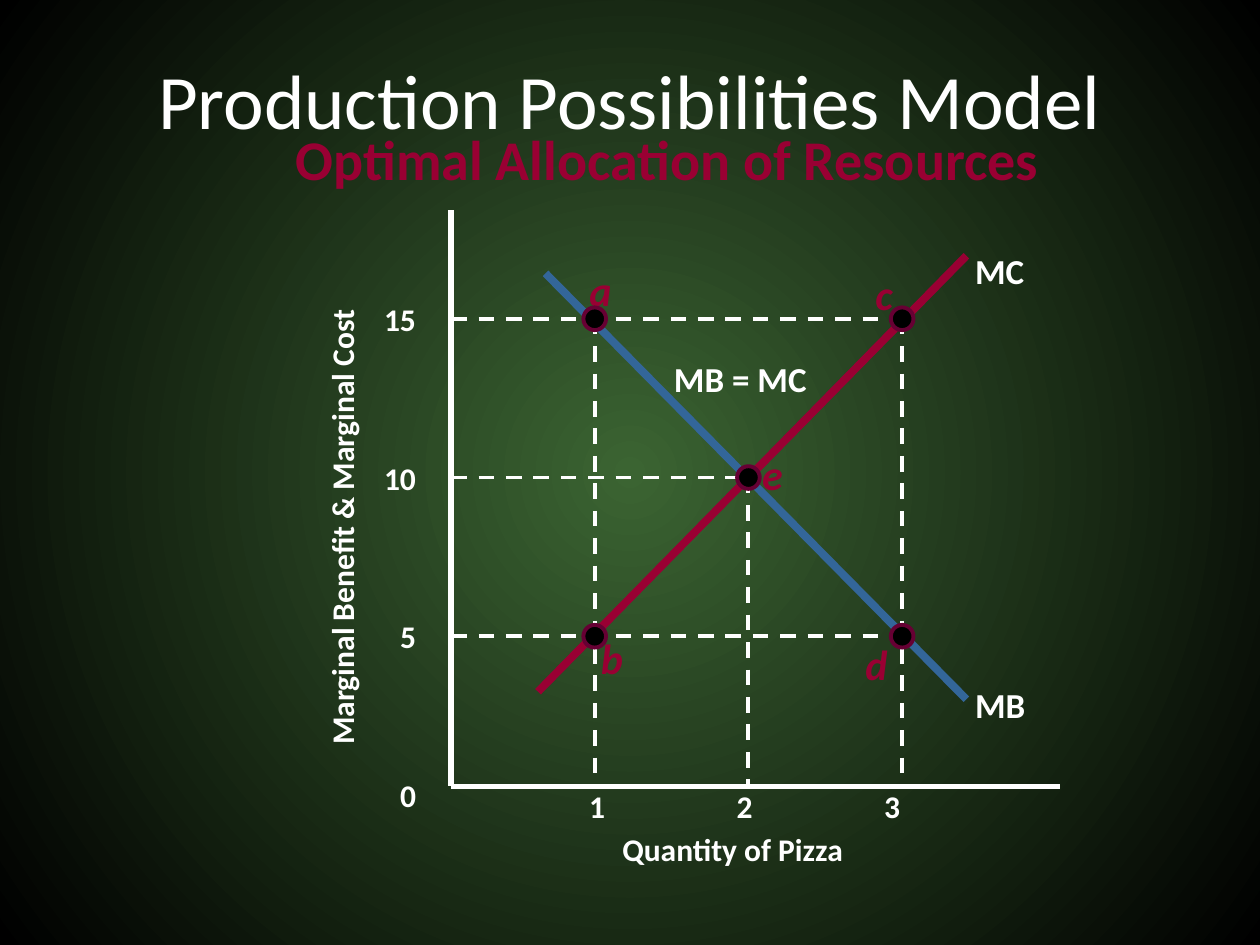
from lxml import etree
from pptx import Presentation
from pptx import util as u
from pptx.dml.color import RGBColor
from pptx.enum import dml, shapes, text
from pptx.oxml.ns import qn

WHITE, CRIMSON, BLUE = "FFFFFF", "990033", "336699"
LEFT, CENTER, RIGHT = text.PP_ALIGN.LEFT, text.PP_ALIGN.CENTER, text.PP_ALIGN.RIGHT
rgb = RGBColor.from_string

deck = Presentation()
deck.slide_width, deck.slide_height = u.Inches(10), u.Inches(7.5)
slide = deck.slides.add_slide(deck.slide_layouts[6])


def label(words, left, top, width, height, size, color=WHITE, bold=True,
          italic=False, align=LEFT):
    box = slide.shapes.add_textbox(*map(u.Inches, (left, top, width, height)))
    frame = box.text_frame
    frame.word_wrap = True
    frame.vertical_anchor = text.MSO_ANCHOR.MIDDLE
    frame.paragraphs[0].alignment = align
    run = frame.paragraphs[0].add_run()
    run.text = words
    run.font.name, run.font.size = "Calibri", u.Pt(size)
    run.font.bold, run.font.italic = bold, italic
    run.font.color.rgb = rgb(color)
    return box


def segment(x1, y1, x2, y2, color, weight, dashed=False):
    line = slide.shapes.add_connector(
        shapes.MSO_CONNECTOR.STRAIGHT, *map(u.Inches, (x1, y1, x2, y2)))
    line.line.color.rgb = rgb(color)
    line.line.width = u.Pt(weight)
    if dashed:
        line.line.dash_style = dml.MSO_LINE.DASH
    etree.SubElement(line._element.spPr, qn("a:effectLst"))


# Background: green glow fading to black from the centre
glow = slide.background.fill
glow.gradient()
for stop, color in zip(glow.gradient_stops, ("3B6432", "000000")):
    stop.color.rgb = rgb(color)
gradient = slide.background._cSld.find(".//" + qn("a:gradFill"))
linear = gradient.find(qn("a:lin"))
radial = etree.Element(qn("a:path"), path="circle")
etree.SubElement(radial, qn("a:fillToRect"), l="50000", t="50000", r="50000", b="50000")
gradient.replace(linear, radial)

# Grid of the graph: one column per pizza, one row per 5 units of cost
axis_x, axis_y = 3.58, 6.24
column = {quantity: 3.5 + 1.22 * quantity for quantity in (1, 2, 3)}
row = {cost: 6.31 - 1.26 * cost / 5 for cost in (0, 5, 10, 15)}
points = {"a": (1, 15), "b": (1, 5), "c": (3, 15), "d": (3, 5), "e": (2, 10)}

# Dashed guides reach the furthest point in each column and row
for quantity, x in column.items():
    highest = max(cost for q, cost in points.values() if q == quantity)
    segment(x, row[highest], x, axis_y, WHITE, 2.25, dashed=True)
for cost in (5, 10, 15):
    furthest = max(q for q, c in points.values() if c == cost)
    segment(axis_x, row[cost], column[furthest], row[cost], WHITE, 2.25, dashed=True)

label("Production Possibilities Model", 0.5, 0.3, 9, 0.96, 44, bold=False, align=CENTER)

# Axes and curves
segment(axis_x, 1.67, axis_x, axis_y, WHITE, 3)
segment(axis_x, axis_y, 8.41, axis_y, WHITE, 3)
segment(4.33, 2.17, 7.67, 5.55, BLUE, 4.5)
segment(4.27, 5.49, 7.67, 2.03, CRIMSON, 4.5)

# Tick labels
for cost, y in row.items():
    label(str(cost), 2.8, y - 0.2, 0.6, 0.4, 18, align=RIGHT)
for quantity in column:
    label(str(quantity), 3.32 + 1.17 * quantity, 6.2, 0.5, 0.4, 18, align=CENTER)

# Point letters, each nudged off its point, then curve names
nudges = {"a": (-0.14, -0.48), "b": (-0.05, -0.08), "c": (-0.31, -0.45),
          "d": (-0.39, -0.03), "e": (0.01, -0.28)}
for letter, (dx, dy) in nudges.items():
    quantity, cost = points[letter]
    label(letter, column[quantity] + dx, row[cost] + dy, 0.4, 0.5, 24, CRIMSON, italic=True)
label("MB = MC", 5.25, 2.79, 1.38, 0.43, 20)
for curve, top in (("MC", 1.93), ("MB", 5.38)):
    label(curve, 7.64, top, 0.65, 0.43, 20)

# Markers
diameter = 0.18
for quantity, cost in points.values():
    marker = slide.shapes.add_shape(
        shapes.MSO_SHAPE.OVAL, u.Inches(column[quantity] - diameter / 2),
        u.Inches(row[cost] - diameter / 2), u.Inches(diameter), u.Inches(diameter))
    marker.shadow.inherit = False
    marker.fill.solid()
    marker.fill.fore_color.rgb = rgb("000000")
    marker.line.color.rgb = rgb("660033")
    marker.line.width = u.Pt(2.25)

# Subtitle and axis titles
label("Optimal Allocation of Resources", 2.25, 0.94, 7.06, 0.63, 32, CRIMSON)
label("Quantity of Pizza", 4.84, 6.54, 2.22, 0.4, 18)
label("Marginal Benefit & Marginal Cost", 0.65, 3.75, 4.12, 0.4, 18).rotation = 270

deck.save("out.pptx")
